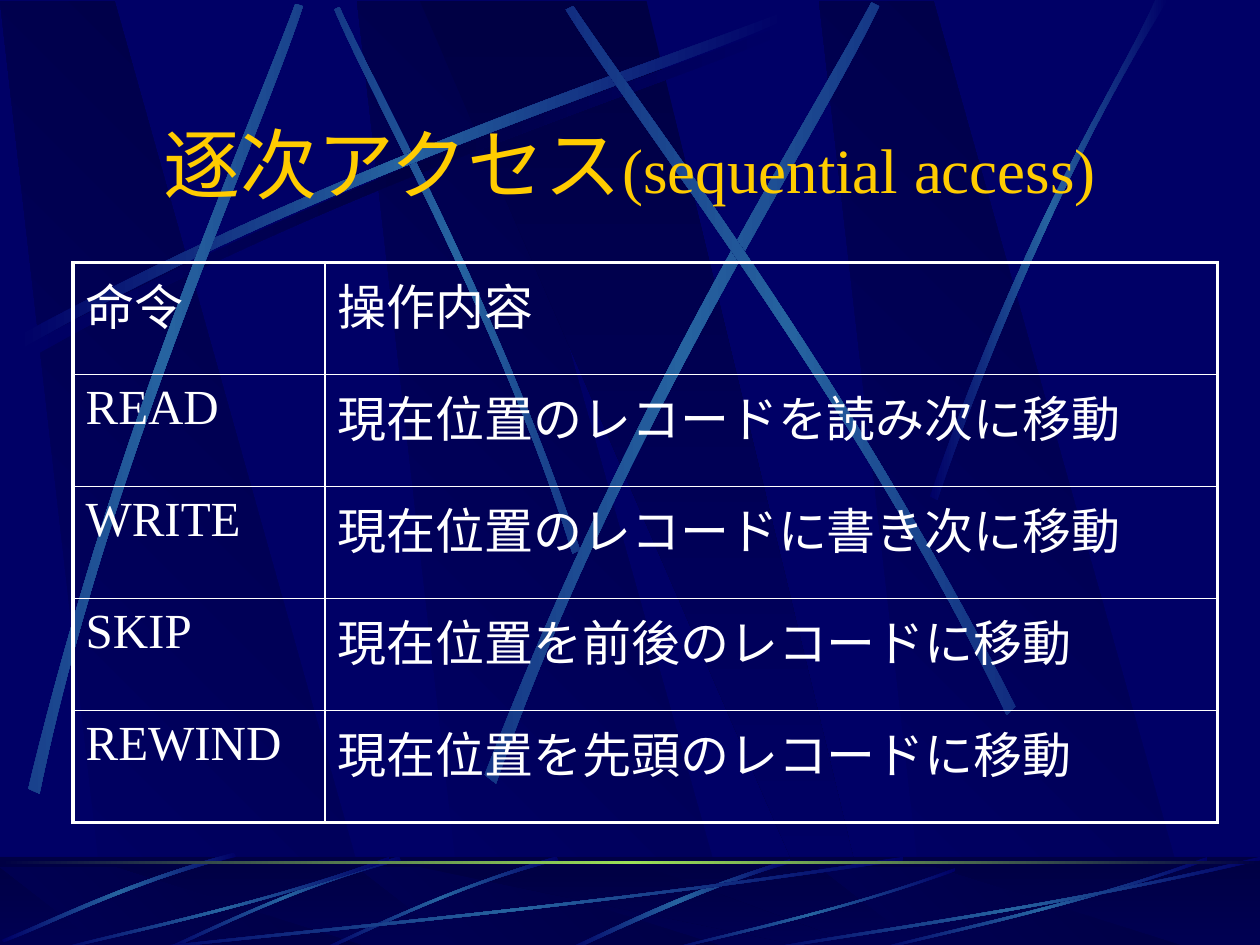
import math
from dataclasses import dataclass

import pptx
import pptx.dml.color
import pptx.enum.shapes
import pptx.enum.text
import pptx.oxml
import pptx.oxml.ns
import pptx.util

Pt = pptx.util.Pt
qn = pptx.oxml.ns.qn
SPACE = pptx.oxml.ns.nsdecls("a")


@dataclass(frozen=True)
class Theme:
    back: str = "000066"
    dark: str = "000044"
    beam: str = "2663A0"
    glow: str = "9CE157"
    gold: str = "FFCC00"
    white: str = "FFFFFF"
    font: str = "Times New Roman"
    head: float = 44
    sub: float = 36
    body: float = 28
    thick: float = 2.25
    thin: float = 1


def rgb(code):
    return pptx.dml.color.RGBColor.from_string(code)


def turn(points, angle):
    """Rotate points about the middle of their bounds."""
    xs, ys = zip(*points)
    mid_x, mid_y = (min(xs) + max(xs)) / 2, (min(ys) + max(ys)) / 2
    cos, sin = math.cos(math.radians(angle)), math.sin(math.radians(angle))
    return [(mid_x + (x - mid_x) * cos - (y - mid_y) * sin,
             mid_y + (x - mid_x) * sin + (y - mid_y) * cos) for x, y in points]


def bend(shape):
    """Turn the two long sides of an eight-point outline into curves."""
    lines = list(shape._element.iter(qn("a:lnTo")))
    for side in (lines[:3], lines[4:7]):
        arc = pptx.oxml.parse_xml(f"<a:cubicBezTo {SPACE}/>")
        side[0].addprevious(arc)
        for line in side:
            arc.append(line[0])
            line.getparent().remove(line)


class Deck:
    def __init__(self, theme):
        self.theme = theme
        self.show = pptx.Presentation()
        self.show.slide_width, self.show.slide_height = Pt(720), Pt(540)
        self.slide = self.show.slides.add_slide(self.show.slide_layouts[5])
        fill = self.slide.background.fill
        fill.solid()
        fill.fore_color.rgb = rgb(theme.back)

    def blend(self, shape, colors, angle):
        """Even gradient, angle clockwise, fixed to the slide."""
        shape.shadow.inherit = False
        shape.line.fill.background()
        shape.fill.gradient()
        grad = shape._element.spPr.find(qn("a:gradFill"))
        grad.set("rotWithShape", "0")
        stops = grad.find(qn("a:gsLst"))
        for stop in list(stops):
            stops.remove(stop)
        for i, color in enumerate(colors):
            place = i * 100000 // (len(colors) - 1)
            stops.append(pptx.oxml.parse_xml(
                f'<a:gs {SPACE} pos="{place}"><a:srgbClr val="{color}"/></a:gs>'))
        grad.find(qn("a:lin")).set("ang", str(angle * 60000))

    def outline(self, points, colors, angle=0):
        first, *rest = [(Pt(x), Pt(y)) for x, y in points]
        pen = self.slide.shapes.build_freeform(*first)
        pen.add_line_segments(rest, close=True)
        shape = pen.convert_to_shape()
        self.blend(shape, colors, angle)
        return shape

    def streak(self, points, angle=0, color=None, shift=(0, 0)):
        """Band between two curves, bright in the middle of its length."""
        points = [(x + shift[0], y + shift[1]) for x, y in points]
        back = self.theme.back
        shape = self.outline(turn(points, -angle), (back, color or self.theme.beam, back))
        bend(shape)
        shape.rotation = angle

    def slabs(self, top, foot):
        dark, back = self.theme.dark, self.theme.back
        for left in (204, 0, 468):
            self.outline([(left + 62, foot), (left + 217.5, foot), (left + 65.5, top),
                          (left, top)], (back, dark), 315)
        self.outline([(240, top), (474, foot), (500, foot), (369.5, top)], (dark, back), 90)

    def rect(self, top, height):
        return self.slide.shapes.add_shape(
            pptx.enum.shapes.MSO_SHAPE.RECTANGLE, 0, Pt(top), Pt(720), Pt(height))

    def band(self, top, height, colors, angle):
        self.blend(self.rect(top, height), colors, angle)

    def veil(self, top, height, color, alpha):
        shape = self.rect(top, height)
        shape.shadow.inherit = False
        shape.line.fill.background()
        shape.fill.solid()
        shape.fill.fore_color.rgb = rgb(color)
        tone = shape._element.spPr.find(qn("a:solidFill"))[0]
        tone.append(pptx.oxml.parse_xml(f'<a:alpha {SPACE} val="{alpha * 1000}"/>'))

    def run(self, para, text, size, color):
        run = para.add_run()
        run.text = text
        run.font.name, run.font.size = self.theme.font, Pt(size)
        run.font.color.rgb = rgb(color)

    def title(self, runs):
        box = self.slide.shapes.title
        box.left, box.top, box.width, box.height = Pt(54), Pt(63), Pt(612), Pt(60)
        frame = box.text_frame
        frame.word_wrap = True
        frame.auto_size = pptx.enum.text.MSO_AUTO_SIZE.SHAPE_TO_FIT_TEXT
        frame.vertical_anchor = pptx.enum.text.MSO_ANCHOR.MIDDLE
        para = frame.paragraphs[0]
        para.alignment = pptx.enum.text.PP_ALIGN.CENTER
        for text, size in runs:
            self.run(para, text, size, self.theme.gold)
        self.slide.shapes._spTree.append(box._element)  # in front of the backdrop

    def table(self, left, top, widths, height, rows):
        look = self.theme
        grid = self.slide.shapes.add_table(
            len(rows), len(widths), Pt(left), Pt(top),
            Pt(sum(widths)), Pt(height * len(rows))).table
        grid.first_row = grid.horz_banding = False
        for col, width in zip(grid.columns, widths):
            col.width = Pt(width)
        for r, row in enumerate(rows):
            grid.rows[r].height = Pt(height)
            for c, text in enumerate(row):
                cell = grid.cell(r, c)
                outer = {"L": c == 0, "R": c == len(widths) - 1,
                         "T": r == 0, "B": r == len(rows) - 1}
                for side, edge in outer.items():
                    self.border(cell, side, look.thick if edge else look.thin)
                cell.fill.background()
                self.run(cell.text_frame.paragraphs[0], text, look.body, look.white)

    def border(self, cell, side, width):
        cell._tc.get_or_add_tcPr().append(pptx.oxml.parse_xml(
            f'<a:ln{side} {SPACE} w="{Pt(width)}"><a:solidFill>'
            f'<a:srgbClr val="{self.theme.white}"/></a:solidFill></a:ln{side}>'))


# Each streak: four curve points out, four back
LONG = [(10, 192.2), (200.2, 90), (373, 36.7), (446.4, 7.2),
        (448.6, 11.5), (375.8, 43.9), (178.6, 103), (12.2, 199.4)]
UPPER = [
    (45, [(331.2, 313.9), (281.5, 168.5), (217.4, 55.4), (193.7, 3.6),
          (190.8, 5), (212.4, 56.9), (286.6, 185.8), (326.9, 316.1)]),
    (0, LONG),
    (311.7, [(16.6, 450), (67, 240.5), (141.8, 75.6), (169.2, 1.4),
             (173.5, 2.9), (149, 78.5), (61.9, 265), (23, 452.9)]),
    (321.6, [(277.2, 442.1), (358.6, 230.4), (459.4, 73.4), (498.2, 0.7),
             (502.6, 2.9), (467.3, 77.8), (349.9, 255.6), (283.7, 447.1)]),
    (34.7, [(580.3, 403.2), (482.4, 211), (371.5, 68.4), (327.6, 2.9),
            (323.3, 5), (365, 72.7), (493.2, 234), (575.3, 408.2)]),
    (0, [(531.4, 283.7), (586.1, 124.6), (639.4, 47.5), (660.2, 0),
         (667.4, 0), (601.9, 104.4), (553.7, 231.8), (535.7, 285.8)]),
]
TWIN = [(228.2, 489.6), (165.6, 507.6), (115.9, 532.8), (94.3, 542.2),
        (95, 543.6), (117.4, 534.2), (172.8, 505.4), (229.7, 491.8)]
LOWER = [
    (0, [(451.4, 491), (386.6, 510.5), (343.4, 534.2), (322.6, 542.9),
         (326.2, 543.6), (352.8, 531.4), (411.1, 504), (452.2, 493.2)]),
    (315, [(x + 90, y) for x, y in TWIN]),
    (315, TWIN),
    (315, [(133.9, 487.4), (71.3, 504), (23.8, 528.5), (1.4, 537.1),
           (2.2, 538.6), (24.5, 530.6), (79.2, 502.6), (135.4, 489.6)]),
]
# Sweeps share one outline, given as parts of width and height
SWEEP = [(1, 0.04), (0.57, 0.57), (0.17, 0.85), (0.01, 1),
         (0, 0.99), (0.17, 0.81), (0.62, 0.51), (1, 0)]
PLACES = [(72, 489.6, 444), (30.2, 489.6, 192), (379.4, 496, 166.3),
          (498, 489.6, 192), (432, 489.6, 288)]
FOOT = 543.6
ROWS = [("命令", "操作内容"),
        ("READ", "現在位置のレコードを読み次に移動"),
        ("WRITE", "現在位置のレコードに書き次に移動"),
        ("SKIP", "現在位置を前後のレコードに移動"),
        ("REWIND", "現在位置を先頭のレコードに移動")]


def main():
    look = Theme()
    deck = Deck(look)
    # Upper backdrop
    deck.slabs(0.7, 541.5)
    deck.streak(LONG, color=look.dark, shift=(4.3, 5.8))
    for angle, points in UPPER:
        deck.streak(points, angle)
    # Lower strip
    deck.band(489.6, 54, (look.dark, look.back), 90)
    deck.slabs(495.5, FOOT)
    deck.veil(489.6, 54, look.dark, 50)
    for angle, points in LOWER:
        deck.streak(points, angle)
    for left, top, width in PLACES:
        deck.streak([(left + x * width, top + y * (FOOT - top)) for x, y in SWEEP])
    deck.band(492.3, 1.7, (look.dark, look.glow, look.dark), 0)
    # Title and table
    deck.title([("逐次アクセス", look.head), ("(sequential access)", look.sub)])
    deck.table(41.75, 150, (144, 510), 64, ROWS)
    deck.show.save("out.pptx")


if __name__ == "__main__":
    main()
